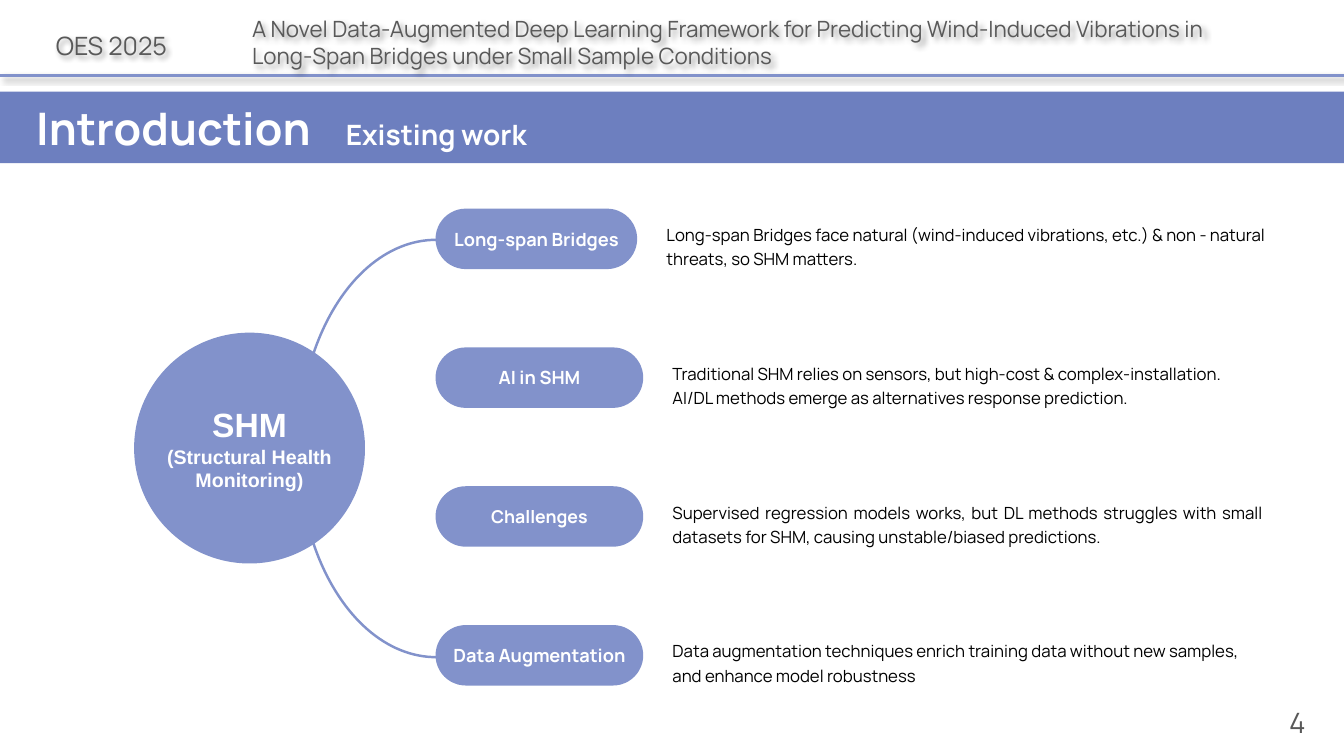
from lxml import etree
from pptx import Presentation
from pptx.dml.color import RGBColor
from pptx.enum.shapes import MSO_CONNECTOR, MSO_SHAPE
from pptx.enum.text import MSO_ANCHOR as Anchor, PP_ALIGN as Align
from pptx.oxml.ns import qn
from pptx.util import Inches, Pt

PERIWINKLE = RGBColor(0x82, 0x92, 0xCB)
BANNER_BLUE = RGBColor(0x49, 0x60, 0xB0)
GREY = RGBColor(0x59, 0x59, 0x59)
WHITE = RGBColor(0xFF, 0xFF, 0xFF)
BLACK = RGBColor(0, 0, 0)
FONT = "Manrope"

WIDTH, HEIGHT = 13.33, 7.5
FIRST_ROW, ROW_PITCH, ROW_HEIGHT = 2.07, 1.377, 0.6
PILL_LEFT, PILL_GAP = 4.32, 0.17
PADDING = 0.12

TOPICS = [
    ("Long-span Bridges", 13, 2.0, 6.39, Align.LEFT,
     "Long-span Bridges face natural (wind-induced vibrations, etc.) & non - natural "
     "threats, so SHM matters."),
    ("AI in SHM", 13, 2.06, 6.1, Align.JUSTIFY,
     "Traditional SHM relies on sensors, but high-cost & complex-installation.\n"
     "AI/DL methods emerge as alternatives response prediction."),
    ("Challenges", 12.6, 2.06, 6.1, Align.JUSTIFY,
     "Supervised regression models works, but DL methods struggles with small "
     "datasets for SHM, causing unstable/biased predictions."),
    ("Data Augmentation", 13, 2.06, 6.1, Align.LEFT,
     "Data augmentation techniques enrich training data without new samples, "
     "and enhance model robustness"),
]


def box(left, top, width, height):
    return [Inches(value) for value in (left, top, width, height)]


def set_margins(frame, margin):
    frame.margin_left = frame.margin_right = Inches(margin)
    frame.margin_top = frame.margin_bottom = Inches(margin)


def style_font(font, size, color, bold=False, name=FONT):
    font.name, font.size, font.bold = name, Pt(size), bold
    font.color.rgb = color


def write(frame, text, size, color, align, bold=False, name=FONT, spacing=None):
    frame.text = text
    for paragraph in frame.paragraphs:
        paragraph.alignment = align
        if spacing:
            paragraph.line_spacing = spacing
        for run in paragraph.runs:
            style_font(run.font, size, color, bold, name)


def add_label(slide, area, text, size, color, align=Align.LEFT,
              anchor=Anchor.BOTTOM, margin=0, spacing=None):
    label = slide.shapes.add_textbox(*box(*area))
    frame = label.text_frame
    frame.word_wrap = True
    frame.vertical_anchor = anchor
    set_margins(frame, margin)
    write(frame, text, size, color, align, spacing=spacing)
    return label


def add_filled(slide, preset, area, color):
    shape = slide.shapes.add_shape(preset, *box(*area))
    shape.shadow.inherit = False
    shape.fill.solid()
    shape.fill.fore_color.rgb = color
    shape.line.fill.background()
    shape.text_frame.vertical_anchor = Anchor.MIDDLE
    return shape


def add_soft_shadow(shape):
    effects = etree.SubElement(shape._element.spPr, qn("a:effectLst"))
    shadow = etree.SubElement(
        effects, qn("a:outerShdw"), blurRad=str(Pt(4)), dist=str(Pt(3)),
        dir="2700000", algn="tl", rotWithShape="0")
    color = etree.SubElement(shadow, qn("a:srgbClr"), val=str(BLACK))
    etree.SubElement(color, qn("a:alpha"), val="40000")


def add_header(slide):
    rule = slide.shapes.add_connector(
        MSO_CONNECTOR.STRAIGHT, 0, Inches(HEIGHT / 10), Inches(WIDTH), Inches(HEIGHT / 10))
    rule.line.color.rgb = PERIWINKLE
    rule.line.width = Pt(2)
    event = add_label(slide, (0.37, 0.14, 1.47, 0.46), "OES 2025", 18, GREY, Align.CENTER)
    title = add_label(
        slide, (2.5, 0.09, 9.5, 0.59),
        "A Novel Data-Augmented Deep Learning Framework for Predicting Wind-Induced "
        "Vibrations in Long-Span Bridges under Small Sample Conditions", 16, GREY)
    for shape in (rule, event, title):
        add_soft_shadow(shape)


def add_banner(slide):
    banner = add_filled(slide, MSO_SHAPE.RECTANGLE, (0, 0.91, WIDTH, 0.71), BANNER_BLUE)
    color = banner._element.spPr.find(qn("a:solidFill"))[0]
    etree.SubElement(color, qn("a:alpha"), val="80000")
    banner.text_frame.margin_left = Inches(0.36)
    paragraph = banner.text_frame.paragraphs[0]
    paragraph.alignment = Align.LEFT
    tabs = etree.SubElement(paragraph._p.get_or_add_pPr(), qn("a:tabLst"))
    etree.SubElement(tabs, qn("a:tab"), pos=str(Inches(3.07)), algn="l")
    for text, size in (("Introduction", 32), ("\tExisting work", 20)):
        run = paragraph.add_run()
        run.text = text
        style_font(run.font, size, WHITE, True)


def add_hub(slide):
    arc = slide.shapes.add_shape(MSO_SHAPE.ARC, *box(2.96, 2.38, 2.73, 4.14))
    arc.shadow.inherit = False
    arc.adjustments[0], arc.adjustments[1] = 162, 54.925
    arc.fill.background()
    arc.line.color.rgb = PERIWINKLE
    arc.line.width = Pt(1.75)
    transform = arc._element.spPr.find(qn("a:xfrm"))
    transform.set("flipH", "1")
    transform.set("flipV", "1")

    hub = add_filled(slide, MSO_SHAPE.OVAL, (1.33, 3.3, 2.29, 2.29), PERIWINKLE)
    frame = hub.text_frame
    frame.word_wrap = False
    write(frame, "SHM\n(Structural Health\nMonitoring)", 14, WHITE, Align.CENTER, True, "Arial")
    frame.paragraphs[0].runs[0].font.size = Pt(24)


def add_topic(slide, row, name, size, pill_width, text_width, align, description):
    top = FIRST_ROW + row * ROW_PITCH
    pill = add_filled(slide, MSO_SHAPE.ROUNDED_RECTANGLE,
                      (PILL_LEFT, top, pill_width, ROW_HEIGHT), PERIWINKLE)
    pill.adjustments[0] = 0.5
    set_margins(pill.text_frame, 0)
    write(pill.text_frame, name, size, WHITE, Align.CENTER, True)
    add_label(slide, (PILL_LEFT + pill_width + PILL_GAP, top, text_width, ROW_HEIGHT),
              description, 12, BLACK, align, Anchor.TOP, PADDING, 1.2)


def main():
    presentation = Presentation()
    presentation.slide_width = Inches(WIDTH)
    presentation.slide_height = Inches(HEIGHT)
    slide = presentation.slides.add_slide(presentation.slide_layouts[6])
    add_header(slide)
    add_banner(slide)
    add_hub(slide)
    for row, topic in enumerate(TOPICS):
        add_topic(slide, row, *topic)
    add_label(slide, (11.81, 6.93, 1.14, 0.4), "4", 20, GREY, Align.RIGHT)
    presentation.save("out.pptx")


if __name__ == "__main__":
    main()
